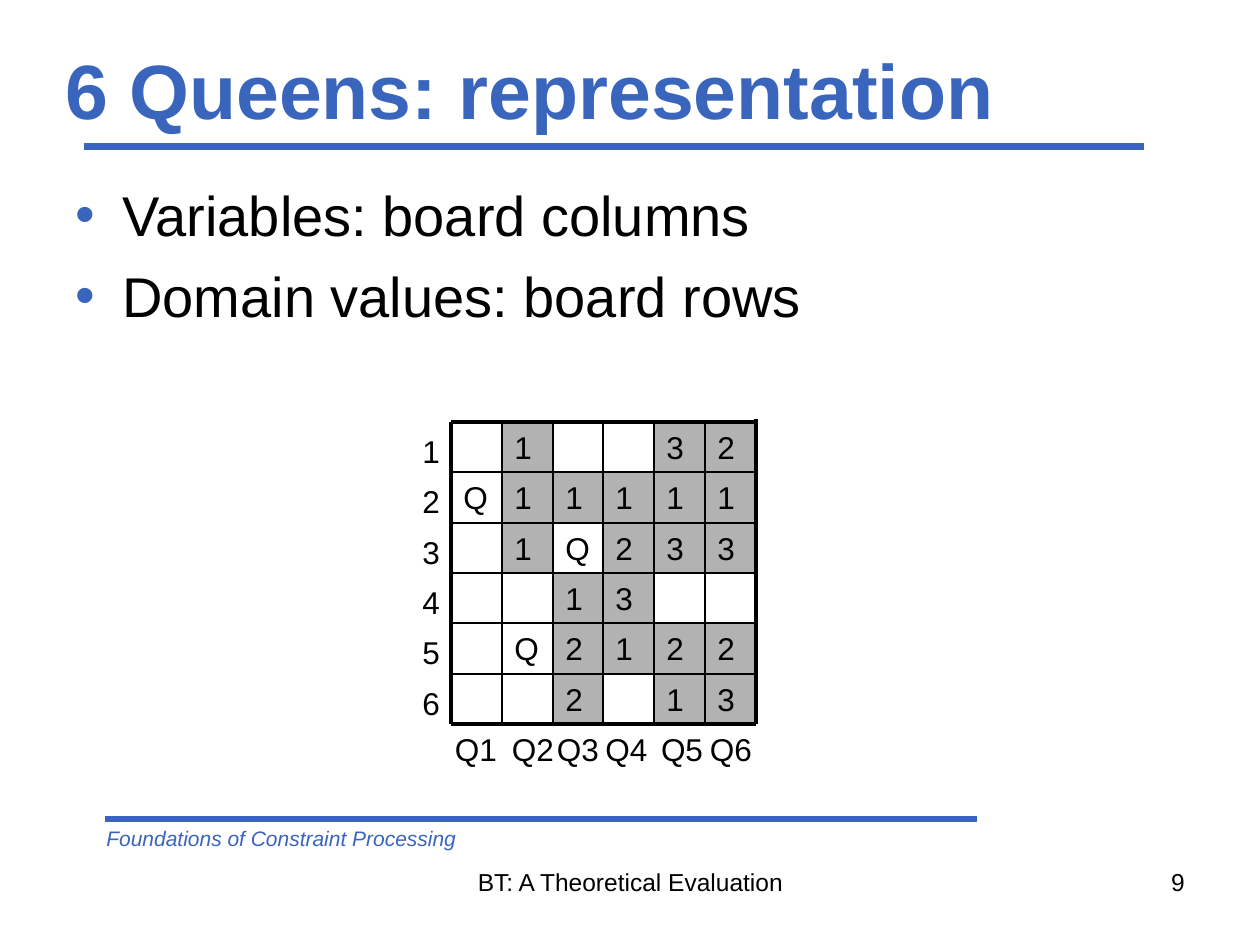
from dataclasses import dataclass

from lxml.etree import SubElement
from pptx import Presentation
from pptx.dml.color import RGBColor
from pptx.enum.shapes import MSO_CONNECTOR, MSO_SHAPE
from pptx.enum.text import MSO_ANCHOR, PP_ALIGN
from pptx.oxml.ns import qn
from pptx.util import Emu, Pt

EMU_PER_PX = 914400 / 126
BOARD_LEFT, BOARD_TOP = 451, 422
BOARD_WIDTH, BOARD_HEIGHT = 305, 302
BOARD = [
    " 1  32",
    "Q11111",
    " 1Q233",
    "  13  ",
    " Q2122",
    "  2 13",
]
SIZE = len(BOARD)
QUEEN_LABELS = [(441, 70), (491, 84), (536, 84), (581, 91), (640, 84), (696, 70)]


@dataclass(frozen=True)
class Theme:
    """Colours, font and type sizes of the slide."""

    accent: str = "3A65BC"
    ink: str = "000000"
    attacked: str = "B2B2B2"
    font: str = "Arial"
    title: int = 44
    body: int = 32
    board: int = 18
    footer: int = 14
    course: int = 12
    rule: float = 4
    edge: float = 2.25
    grid: float = 1


def px(length):
    """Turn pixels into EMU."""
    return Emu(round(length * EMU_PER_PX))


def write(frame, text, *, font, size, color, bold=False, italic=False,
          align=PP_ALIGN.LEFT, anchor=MSO_ANCHOR.TOP, bullet=None, gap=0):
    """Fill a text frame with one paragraph per line of text."""
    frame.word_wrap = True
    frame.vertical_anchor = anchor
    for index, line in enumerate(text.split("\n")):
        para = frame.add_paragraph() if index else frame.paragraphs[0]
        para.alignment = align
        if index:
            para.space_before = Pt(gap)
        if bullet:
            properties = para._p.get_or_add_pPr()
            properties.set("marL", str(px(47)))
            properties.set("indent", str(px(-47)))
            bullet_color = SubElement(properties, qn("a:buClr"))
            SubElement(bullet_color, qn("a:srgbClr"), val=bullet)
            SubElement(properties, qn("a:buFont"), typeface=font)
            SubElement(properties, qn("a:buChar"), char="•")
        span = para.add_run()
        span.text = line
        span.font.name = font
        span.font.size = Pt(size)
        span.font.bold = bold
        span.font.italic = italic
        span.font.color.rgb = RGBColor.from_string(color)


class SlidePainter:
    """Draws elements in one theme on the current slide."""

    def __init__(self, page, theme):
        """Keep the slide and its style."""
        self.page = page
        self.theme = theme

    def text(self, left, top, width, height, text, size, color=None, **style):
        """Add a text box."""
        box = self.page.shapes.add_textbox(px(left), px(top), px(width), px(height))
        write(box.text_frame, text, font=self.theme.font, size=size,
              color=color or self.theme.ink, **style)

    def square(self, left, top, width, height, text):
        """Add an attacked square that shows its number of attacks."""
        shape = self.page.shapes.add_shape(
            MSO_SHAPE.RECTANGLE, px(left), px(top), px(width), px(height))
        shape.shadow.inherit = False
        shape.fill.solid()
        shape.fill.fore_color.rgb = RGBColor.from_string(self.theme.attacked)
        shape.line.fill.background()
        write(shape.text_frame, text, font=self.theme.font,
              size=self.theme.board, color=self.theme.ink)

    def line(self, start, end, color, weight):
        """Add a straight line between two points."""
        connector = self.page.shapes.add_connector(
            MSO_CONNECTOR.STRAIGHT, *map(px, start + end))
        connector.line.color.rgb = RGBColor.from_string(color)
        connector.line.width = Pt(weight)
        SubElement(connector._element.spPr, qn("a:effectLst"))


def column_edge(column):
    """Give the left edge of a board column."""
    return BOARD_LEFT + round(column * BOARD_WIDTH / SIZE)


def row_edge(row):
    """Give the top edge of a board row."""
    return BOARD_TOP + round(row * BOARD_HEIGHT / SIZE)


def draw_board(painter):
    """Draw the squares, grid and labels of the board."""
    theme = painter.theme
    for row, marks in enumerate(BOARD):
        for column, mark in enumerate(marks):
            left, top = column_edge(column), row_edge(row)
            area = (left, top, column_edge(column + 1) - left, row_edge(row + 1) - top)
            if mark == "Q":
                painter.text(*area, mark, theme.board)
            elif mark != " ":
                painter.square(*area, mark)

    right, bottom = column_edge(SIZE), row_edge(SIZE)
    for index in range(SIZE + 1):
        weight = theme.edge if index in (0, SIZE) else theme.grid
        x, y = column_edge(index), row_edge(index)
        painter.line((BOARD_LEFT, y), (right, y), theme.ink, weight)
        painter.line((x, BOARD_TOP), (x, bottom), theme.ink, weight)
    painter.line((right, BOARD_TOP - 3), (right, row_edge(5)), theme.ink, theme.edge)

    for index, (left, width) in enumerate(QUEEN_LABELS):
        painter.text(left, bottom, width, 50, f"Q{index + 1}", theme.board,
                     align=PP_ALIGN.CENTER)
        painter.text(410, row_edge(index) + 4, 42, 50, str(index + 1), theme.board,
                     align=PP_ALIGN.CENTER)


def main():
    """Build the slide and save it."""
    deck = Presentation()
    deck.slide_width, deck.slide_height = px(1260), px(945)
    page = deck.slides.add_slide(deck.slide_layouts[6])
    theme = Theme()
    painter = SlidePainter(page, theme)

    painter.line((84, 147), (1144, 147), theme.accent, theme.rule)
    painter.line((105, 819), (977, 819), theme.accent, theme.rule)
    painter.text(94, 819, 662, 38, "Foundations of Constraint Processing",
                 theme.course, theme.accent, italic=True)
    painter.text(431, 861, 399, 66, "BT: A Theoretical Evaluation", theme.footer,
                 align=PP_ALIGN.CENTER)
    painter.text(903, 861, 294, 66, "9", theme.footer, align=PP_ALIGN.RIGHT)
    painter.text(53, 42, 1134, 94, "6 Queens: representation", theme.title,
                 theme.accent, bold=True, anchor=MSO_ANCHOR.MIDDLE)
    painter.text(63, 174, 1134, 624,
                 "Variables: board columns\nDomain values: board rows",
                 theme.body, bullet=theme.accent, gap=8)
    draw_board(painter)
    deck.save("out.pptx")


if __name__ == "__main__":
    main()
